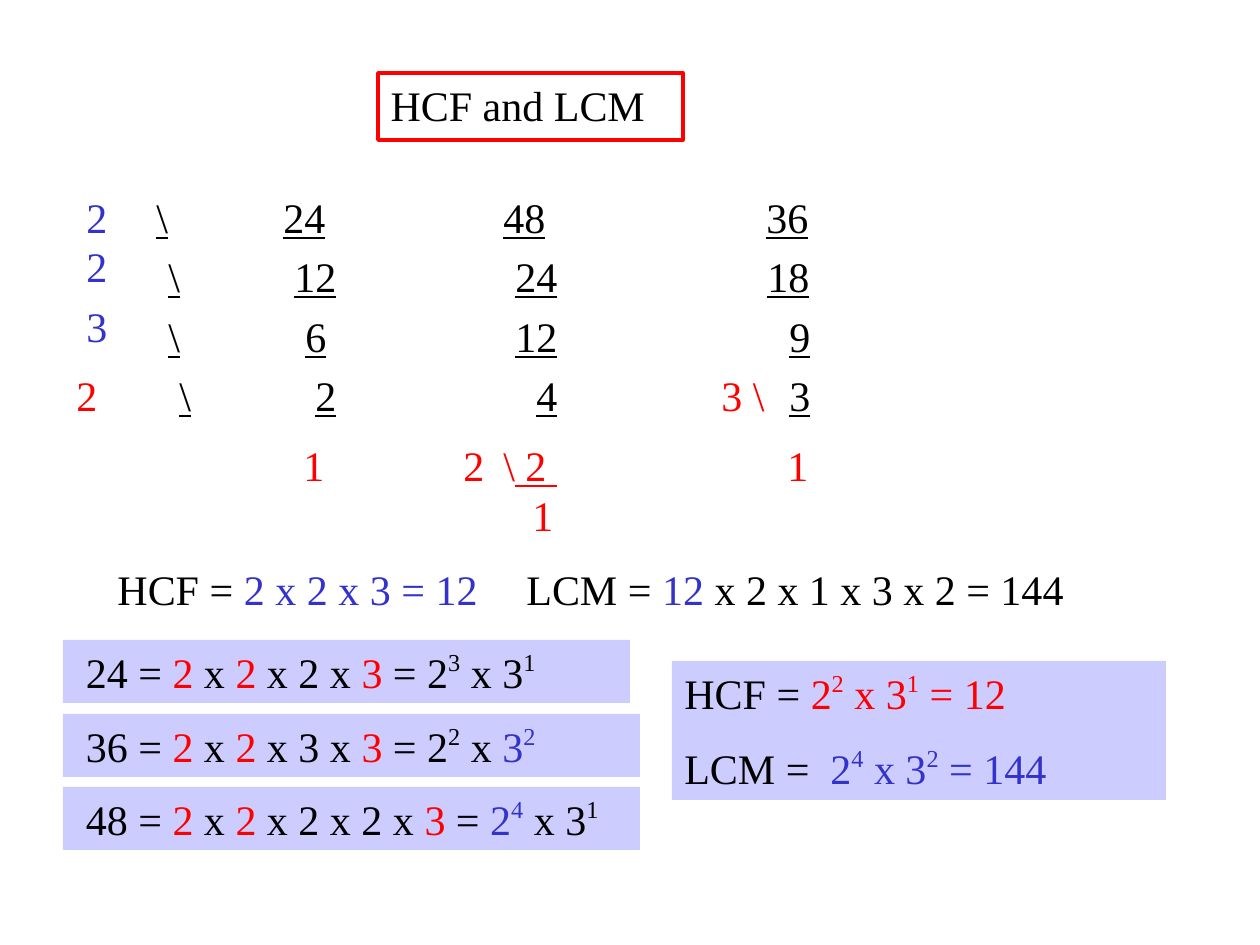
import pptx
import pptx.util
import pptx.dml.color
import pptx.enum.shapes
import pptx.enum.text
import pptx.oxml.ns
import lxml.etree

PX = 914400 / 126
INSET = 13
FONT = "Times New Roman"
COLORS = {"black": "000000", "red": "FF0000", "blue": "3333CC", "lilac": "CCCCFF"}


def add_runs(p, runs):
    p.alignment = pptx.enum.text.PP_ALIGN.LEFT
    for text, color, style in runs:
        r = p.add_run()
        r.text = text
        r.font.name = FONT
        r.font.size = pptx.util.Pt(24)
        r.font.color.rgb = pptx.dml.color.RGBColor.from_string(COLORS[color])
        if style == "underline":
            r.font.underline = True
        if style == "super":
            r._r.get_or_add_rPr().set("baseline", "40000")


def add_tabs(p, stops):
    tabs = lxml.etree.SubElement(p._p.get_or_add_pPr(), pptx.oxml.ns.qn("a:tabLst"))
    for x, align in stops:
        tab = lxml.etree.SubElement(tabs, pptx.oxml.ns.qn("a:tab"))
        tab.set("pos", str(round(x * PX)))
        tab.set("algn", align)


prs = pptx.Presentation()
prs.slide_width = round(1260 * PX)
prs.slide_height = round(945 * PX)
s = prs.slides.add_slide(prs.slide_layouts[5])

title = s.shapes.title
title.left, title.top, title.width, title.height = [round(v * PX) for v in (378, 73, 305, 67)]
title.line.color.rgb = pptx.dml.color.RGBColor.from_string(COLORS["red"])
title.line.width = pptx.util.Pt(2)
tf = title.text_frame
tf.word_wrap = True
tf.auto_size = pptx.enum.text.MSO_AUTO_SIZE.NONE
tf.vertical_anchor = pptx.enum.text.MSO_ANCHOR.TOP
add_runs(tf.paragraphs[0], [("HCF and LCM", "black", "")])

division_rows = [
    ((134, 185, 746), (157, 326, 546, 809), ("24", "48", "36")),
    ((113, 244, 766), (169, 337, 558, 810), ("12", "24", "18")),
    ((105, 304, 819), (169, 327, 558, 811), ("6", "12", "9")),
    ((105, 363, 777), (180, 337, 558, 811), ("2", "4", "3")),
]
lines = []
for box, stops, numbers in division_rows:
    runs = [("\t", "black", ""), ("\\\t" + "\t".join(numbers), "black", "underline")]
    lines.append((box, list(zip(stops, "lrrr")), runs))
lines += [
    ((123, 433, 766), [(325, "r"), (504, "l"), (809, "r")],
     [("\t1\t\\", "red", ""), (" 2 ", "red", "underline"), ("\t1", "red", "")]),
    ((105, 557, 924), [], [("HCF = ", "black", ""), ("2 x 2 x 3 = 12", "blue", "")]),
    ((514, 557, 620), [],
     [("LCM = ", "black", ""), ("12", "blue", ""), (" x 2 x 1 x 3 x 2 = 144", "black", "")]),
]
labels = [
    (74, 185, 63, "2", "blue"),
    (74, 234, 63, "2", "blue"),
    (74, 294, 63, "3", "blue"),
    (64, 363, 73, "2", "red"),
    (709, 363, 79, "3 \\", "red"),
    (451, 433, 79, "2", "red"),
    (520, 483, 79, "1", "red"),
]
lines += [((x, y, w), [], [(text, color, "")]) for x, y, w, text, color in labels]

for (x, y, w), stops, runs in lines:
    sp = s.shapes.add_textbox(*[round(v * PX) for v in (x, y, w, 63)])
    tf = sp.text_frame
    tf.word_wrap = True
    p = tf.paragraphs[0]
    add_runs(p, runs)
    if stops:
        add_tabs(p, [(stop - x - INSET, align[0]) for stop, align in stops])

for tab in s.shapes._spTree.iter(pptx.oxml.ns.qn("a:tab")):
    tab.set("algn", {"l": "l", "r": "r"}[tab.get("algn")])

shared = [("2", "red", ""), (" x ", "black", ""), ("2", "red", "")]
panels = [
    ((63, 640, 567, 63), [
        [(" 24 = ", "black", "")] + shared
        + [(" x 2 x ", "black", ""), ("3", "red", ""), (" = 2", "black", ""),
           ("3", "black", "super"), (" x 3", "black", ""), ("1", "black", "super")]]),
    ((63, 714, 577, 63), [
        [(" 36 = ", "black", "")] + shared
        + [(" x 3 x ", "black", ""), ("3", "red", ""), (" = 2", "black", ""),
           ("2", "black", "super"), (" x ", "black", ""), ("3", "blue", ""), ("2", "blue", "super")]]),
    ((63, 787, 577, 63), [
        [(" 48 = ", "black", "")] + shared
        + [(" x 2 x 2 x ", "black", ""), ("3", "red", ""), (" = ", "black", ""), ("2", "blue", ""),
           ("4", "blue", "super"), (" x 3", "black", ""), ("1", "black", "super")]]),
    ((672, 661, 494, 139), [
        [("HCF = ", "black", ""), ("2", "red", ""), ("2", "red", "super"), (" x 3", "red", ""),
         ("1", "red", "super"), (" = 12", "red", "")],
        [("LCM =\t", "black", ""), ("2", "blue", ""), ("4", "blue", "super"), (" x 3", "blue", ""),
         ("2", "blue", "super"), (" = 144", "blue", "")]]),
]
for box, paragraphs in panels:
    sp = s.shapes.add_shape(pptx.enum.shapes.MSO_SHAPE.RECTANGLE, *[round(v * PX) for v in box])
    sp.shadow.inherit = False
    sp.fill.solid()
    sp.fill.fore_color.rgb = pptx.dml.color.RGBColor.from_string(COLORS["lilac"])
    sp.line.fill.background()
    tf = sp.text_frame
    tf.word_wrap = True
    tf.vertical_anchor = pptx.enum.text.MSO_ANCHOR.TOP
    for i, runs in enumerate(paragraphs):
        p = tf.add_paragraph() if i else tf.paragraphs[0]
        add_runs(p, runs)
        if i:
            p.space_before = pptx.util.Pt(14.4)
            add_tabs(p, [(146, "l")])

prs.save("out.pptx")
